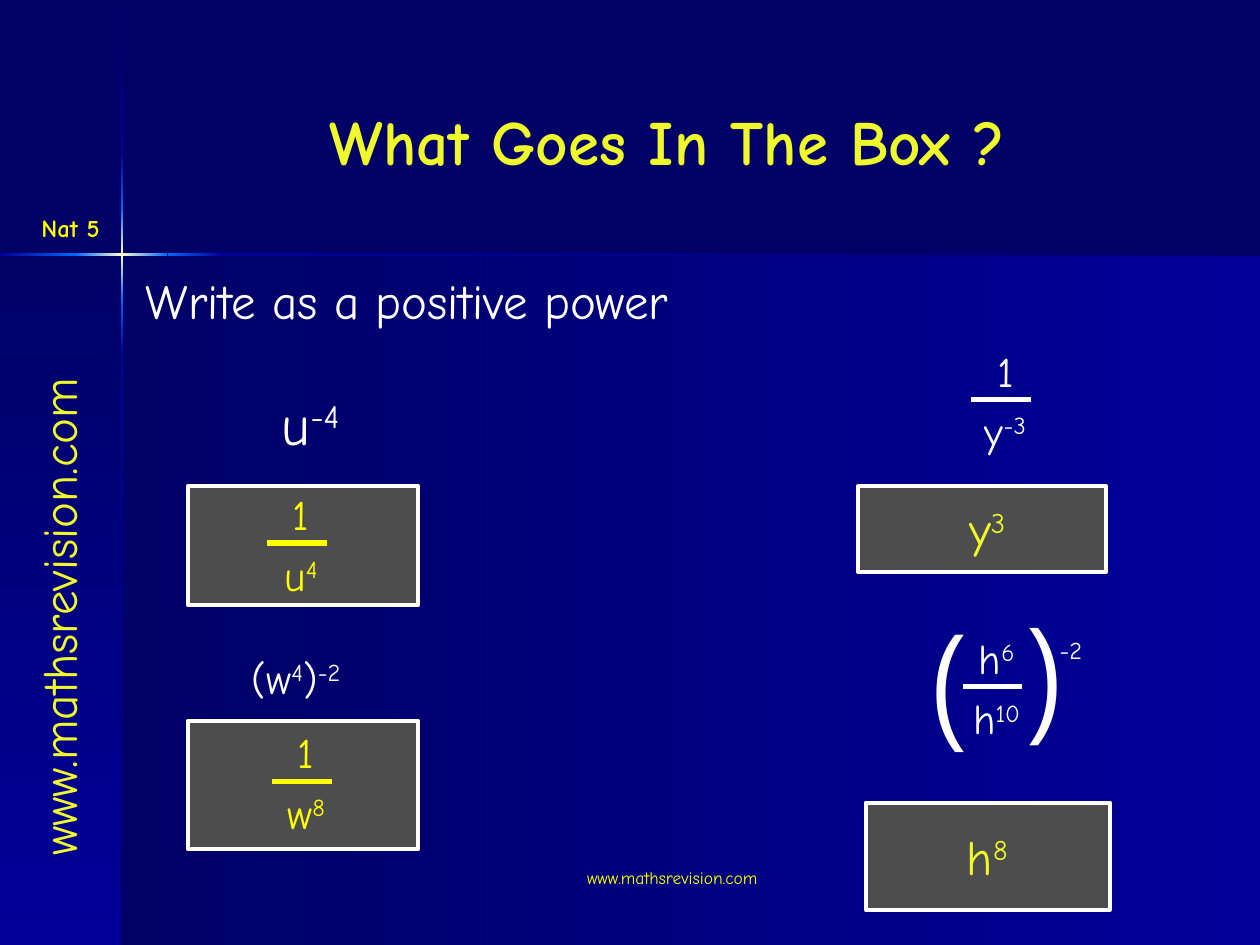
from copy import deepcopy
from dataclasses import dataclass

from lxml.etree import SubElement
from pptx import Presentation
from pptx.dml.color import RGBColor
from pptx.enum.shapes import MSO_CONNECTOR, MSO_SHAPE
from pptx.enum.text import MSO_ANCHOR, PP_ALIGN
from pptx.oxml.ns import qn
from pptx.util import Inches, Pt

WIDTH, HEIGHT = Inches(10), Inches(7.5)
COLUMN, ROW = WIDTH / 100, HEIGHT / 75

NIGHT, NAVY, BLUE, GLOW = "000066", "000099", "0066FF", "FFFFCC"
WHITE, YELLOW, LEMON, GREY = "FFFFFF", "FFFF00", "EEF82A", "4D4D4D"


@dataclass
class Area:
    column: float
    row: float
    columns: float
    rows: float

    def lengths(self) -> list[int]:
        return [
            round(self.column * COLUMN),
            round(self.row * ROW),
            round(self.columns * COLUMN),
            round(self.rows * ROW),
        ]


@dataclass
class Band:
    area: Area
    colors: tuple[str, ...]
    vertical: bool


@dataclass
class Label:
    text: str
    area: Area
    size: float
    color: str
    bold: bool = False
    centered: bool = True
    wrap: bool = True
    middle: bool = False
    rotation: float = 0
    font: str = "Comic Neue"


@dataclass
class Fraction:
    column: float
    row: float
    numerator: str
    denominator: str
    color: str


def rgb(color: str) -> RGBColor:
    return RGBColor.from_string(color)


def draw_rectangle(slide, area: Area):
    shape = slide.shapes.add_shape(MSO_SHAPE.RECTANGLE, *area.lengths())
    shape.shadow.inherit = False
    return shape


def draw_band(slide, band: Band) -> None:
    shape = draw_rectangle(slide, band.area)
    shape.line.fill.background()
    shape.fill.gradient()
    shape.fill.gradient_angle = 270 if band.vertical else 0
    stop_list = shape._element.spPr.find(".//" + qn("a:gsLst"))
    for _ in band.colors[2:]:
        stop_list.append(deepcopy(stop_list[0]))
    last = len(band.colors) - 1
    for index, (stop, color) in enumerate(zip(shape.fill.gradient_stops, band.colors)):
        stop.color.rgb = rgb(color)
        stop.position = index / last


def draw_answer_box(slide, area: Area) -> None:
    shape = draw_rectangle(slide, area)
    shape.fill.solid()
    shape.fill.fore_color.rgb = rgb(GREY)
    shape.line.color.rgb = rgb(WHITE)
    shape.line.width = Pt(2.25)


def draw_label(slide, label: Label) -> None:
    shape = slide.shapes.add_textbox(*label.area.lengths())
    shape.rotation = label.rotation
    frame = shape.text_frame
    frame.word_wrap = label.wrap
    frame.vertical_anchor = MSO_ANCHOR.MIDDLE if label.middle else MSO_ANCHOR.TOP
    paragraph = frame.paragraphs[0]
    paragraph.alignment = PP_ALIGN.CENTER if label.centered else PP_ALIGN.LEFT
    for index, part in enumerate(label.text.split("^")):
        if not part:
            continue
        run = paragraph.add_run()
        run.text = part
        run.font.name = label.font
        run.font.size = Pt(label.size)
        run.font.bold = label.bold
        run.font.color.rgb = rgb(label.color)
        if index % 2:
            run._r.get_or_add_rPr().set("baseline", "30000")


def draw_fraction(slide, fraction: Fraction) -> None:
    left, row = fraction.column, fraction.row
    for text, top in ((fraction.numerator, row - 4.8), (fraction.denominator, row)):
        area = Area(left - 0.3, top, 6, 5)
        draw_label(slide, Label(text, area, 24, fraction.color, wrap=False))
    start, level, length, _ = Area(left, row, 4.75, 0).lengths()
    bar = slide.shapes.add_connector(
        MSO_CONNECTOR.STRAIGHT, start + length, level, start, level
    )
    bar.line.color.rgb = rgb(fraction.color)
    bar.line.width = Pt(3)
    SubElement(bar._element.spPr, qn("a:effectLst"))


BANDS = [
    Band(Area(9.7, 20.2, 90.3, 54.8), (NIGHT, NAVY), False),
    Band(Area(0, 20.2, 9.7, 54.8), (NIGHT, NAVY), True),
    Band(Area(9.6, 0.1, 0.2, 12), (NIGHT, NAVY), True),
    Band(Area(9.6, 28.2, 0.2, 46.8), (NAVY, NIGHT), True),
    Band(Area(17.7, 20.1, 82.3, 0.2), (NAVY, NIGHT), False),
    Band(Area(9.6, 23.8, 0.2, 4.4), (BLUE, NAVY), True),
    Band(Area(9.6, 12.1, 0.2, 4.4), (NAVY, BLUE), True),
    Band(Area(9.6, 16.5, 0.2, 7.3), (BLUE, GLOW, BLUE), True),
    Band(Area(0, 20.1, 6.1, 0.2), (NAVY, BLUE), False),
    Band(Area(13.3, 20.1, 4.4, 0.2), (BLUE, NAVY), False),
    Band(Area(6, 20.1, 7.3, 0.2), (BLUE, GLOW, BLUE), False),
]

ANSWER_BOXES = [
    Area(68.7, 63.7, 19.4, 8.5),
    Area(14.9, 38.6, 18.3, 9.4),
    Area(14.9, 57.2, 18.3, 10.2),
    Area(68.1, 38.6, 19.7, 6.8),
]

ADDRESS = "www.mathsrevision.com"
LABELS = [
    Label(ADDRESS, Area(-17.3, 44.1, 43.9, 5.7), 28, LEMON,
          centered=False, wrap=False, rotation=270),
    Label(ADDRESS, Area(37.5, 68.3, 31.7, 5), 10, YELLOW),
    Label("What Goes In The Box ?", Area(11.7, 3.3, 82.5, 15.7), 36, LEMON,
          bold=True, middle=True),
    Label("Nat 5", Area(1.8, 16.4, 7.6, 3.4), 14, YELLOW, bold=True, wrap=False),
    Label("Write as a positive power", Area(10.6, 21, 89.4, 5.7), 28, WHITE,
          centered=False),
    Label("u^-4", Area(15.6, 30.4, 18.1, 6.4), 32, WHITE),
    Label("(w^4^)^-2", Area(14.6, 51.3, 17.8, 5), 24, WHITE),
    Label("y^3", Area(70.5, 39.1, 15.7, 5.7), 28, LEMON),
    Label("(", Area(72.9, 47.2, 4.7, 13), 72, WHITE, wrap=False, font="Arial Narrow"),
    Label("(", Area(80.7, 49.4, 4.7, 13), 72, WHITE, wrap=False, rotation=180,
          font="Arial Narrow"),
    Label("^-2", Area(83, 49.5, 4, 5), 24, WHITE, wrap=False),
    Label("h^8", Area(70.5, 65.1, 15.7, 5.7), 28, LEMON),
]

FRACTIONS = [
    Fraction(21.2, 43.1, "1", "u^4", YELLOW),
    Fraction(77.1, 31.7, "1", "y^-3", WHITE),
    Fraction(21.6, 62, "1", "w^8", YELLOW),
    Fraction(76.4, 54.5, "h^6", "h^10", WHITE),
]


def main() -> None:
    presentation = Presentation()
    presentation.slide_width, presentation.slide_height = WIDTH, HEIGHT
    slide = presentation.slides.add_slide(presentation.slide_layouts[6])
    slide.background.fill.solid()
    slide.background.fill.fore_color.rgb = rgb(NIGHT)
    for band in BANDS:
        draw_band(slide, band)
    for area in ANSWER_BOXES:
        draw_answer_box(slide, area)
    for label in LABELS:
        draw_label(slide, label)
    for fraction in FRACTIONS:
        draw_fraction(slide, fraction)
    presentation.save("out.pptx")


if __name__ == "__main__":
    main()
